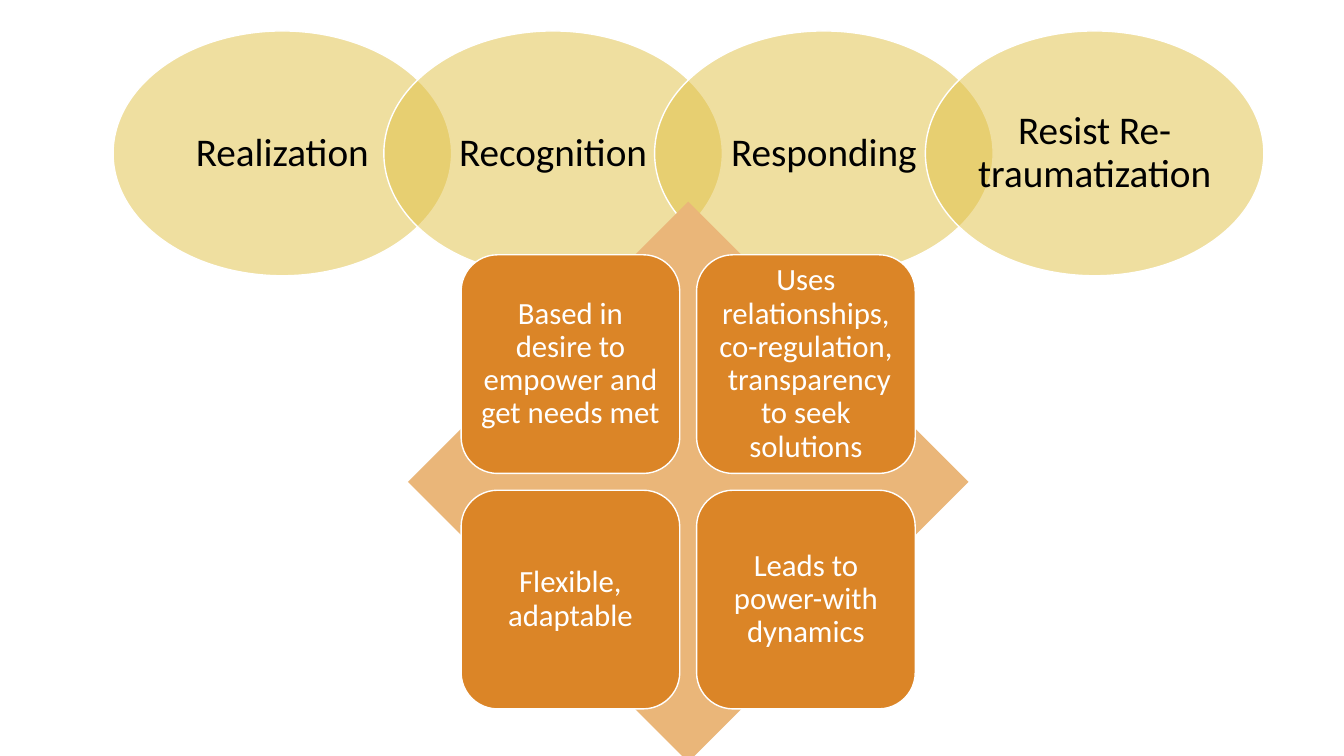
from dataclasses import dataclass

from lxml.etree import SubElement
from pptx import Presentation
from pptx.dml.color import RGBColor as RGB
from pptx.enum.shapes import MSO_SHAPE as SHAPE
from pptx.enum.text import MSO_ANCHOR as ANCHOR, PP_ALIGN as ALIGN
from pptx.oxml.ns import qn
from pptx.util import Pt


@dataclass(frozen=True)
class Theme:
    font: str = "Calibri"
    black: RGB = RGB(0x00, 0x00, 0x00)
    white: RGB = RGB(0xFF, 0xFF, 0xFF)
    gold: RGB = RGB(0xE1, 0xC0, 0x43)
    orange: RGB = RGB(0xDB, 0x85, 0x27)
    peach: RGB = RGB(0xEA, 0xB6, 0x79)
    principle_size: int = 28
    practice_size: int = 22
    outline: float = 1


def write_text(shape, text, *, font, size, color, inset=0):
    """Put centred, wrapped text in a shape; inset is in points on all sides."""
    frame = shape.text_frame
    frame.word_wrap = True
    frame.vertical_anchor = ANCHOR.MIDDLE
    frame.margin_left = frame.margin_right = Pt(inset)
    frame.margin_top = frame.margin_bottom = Pt(inset)
    paragraph = frame.paragraphs[0]
    paragraph.alignment = ALIGN.CENTER
    paragraph.line_spacing = 0.9
    run = paragraph.add_run()
    run.text = text
    run.font.name = font
    run.font.size = Pt(size)
    run.font.color.rgb = color


class Diagram:
    def __init__(self, slide, theme):
        self.slide = slide
        self.theme = theme

    def start_group(self):
        """Collect the elements that follow in a new group."""
        self.group = self.slide.shapes.add_group_shape()

    def add_filled(self, kind, left, top, width, height, fill, outlined=True):
        shape = self.group.shapes.add_shape(
            kind, Pt(left), Pt(top), Pt(width), Pt(height))
        shape.shadow.inherit = False
        shape.fill.solid()
        shape.fill.fore_color.rgb = fill
        if outlined:
            shape.line.color.rgb = self.theme.white
            shape.line.width = Pt(self.theme.outline)
        else:
            shape.line.fill.background()
        return shape

    def add_principle(self, text, left, top, width, height):
        theme = self.theme
        oval = self.add_filled(SHAPE.OVAL, left, top, width, height, theme.gold)
        color = oval._element.spPr.find(qn("a:solidFill"))[0]
        SubElement(color, qn("a:alpha"), val="50000")
        write_text(oval, text, font=theme.font, size=theme.principle_size,
                   color=theme.black)

    def add_diamond(self, left, top, side):
        self.add_filled(SHAPE.DIAMOND, left, top, side, side,
                        self.theme.peach, outlined=False)

    def add_practice(self, text, left, top, side):
        theme = self.theme
        card = self.add_filled(SHAPE.ROUNDED_RECTANGLE, left, top, side, side,
                               theme.orange)
        write_text(card, text, font=theme.font, size=theme.practice_size,
                   color=theme.white, inset=6.6)


PRINCIPLES = ["Realization", "Recognition", "Responding", "Resist Re-traumatization"]
PRACTICES = [
    "Based in desire to empower and get needs met",
    "Uses relationships, co-regulation,  transparency to seek solutions",
    "Flexible, adaptable",
    "Leads to power-with dynamics",
]


def main():
    deck = Presentation()
    deck.slide_width, deck.slide_height = Pt(960), Pt(540)
    diagram = Diagram(deck.slides.add_slide(deck.slide_layouts[6]), Theme())

    oval_width, oval_height, oval_step = 241.8, 174.9, 193.4
    diagram.start_group()
    for index, principle in enumerate(PRINCIPLES):
        diagram.add_principle(principle, 80.8 + index * oval_step, 22.1,
                              oval_width, oval_height)

    diamond_left, diamond_top, diamond_side = 291.4, 144, 400.4
    card_side, card_gap = 156.2, 12
    card_step = card_side + card_gap
    margin = (diamond_side - card_step - card_side) / 2
    diagram.start_group()
    diagram.add_diamond(diamond_left, diamond_top, diamond_side)
    for index, practice in enumerate(PRACTICES):
        row, column = divmod(index, 2)
        diagram.add_practice(practice,
                             diamond_left + margin + column * card_step,
                             diamond_top + margin + row * card_step,
                             card_side)

    deck.save("out.pptx")


if __name__ == "__main__":
    main()
